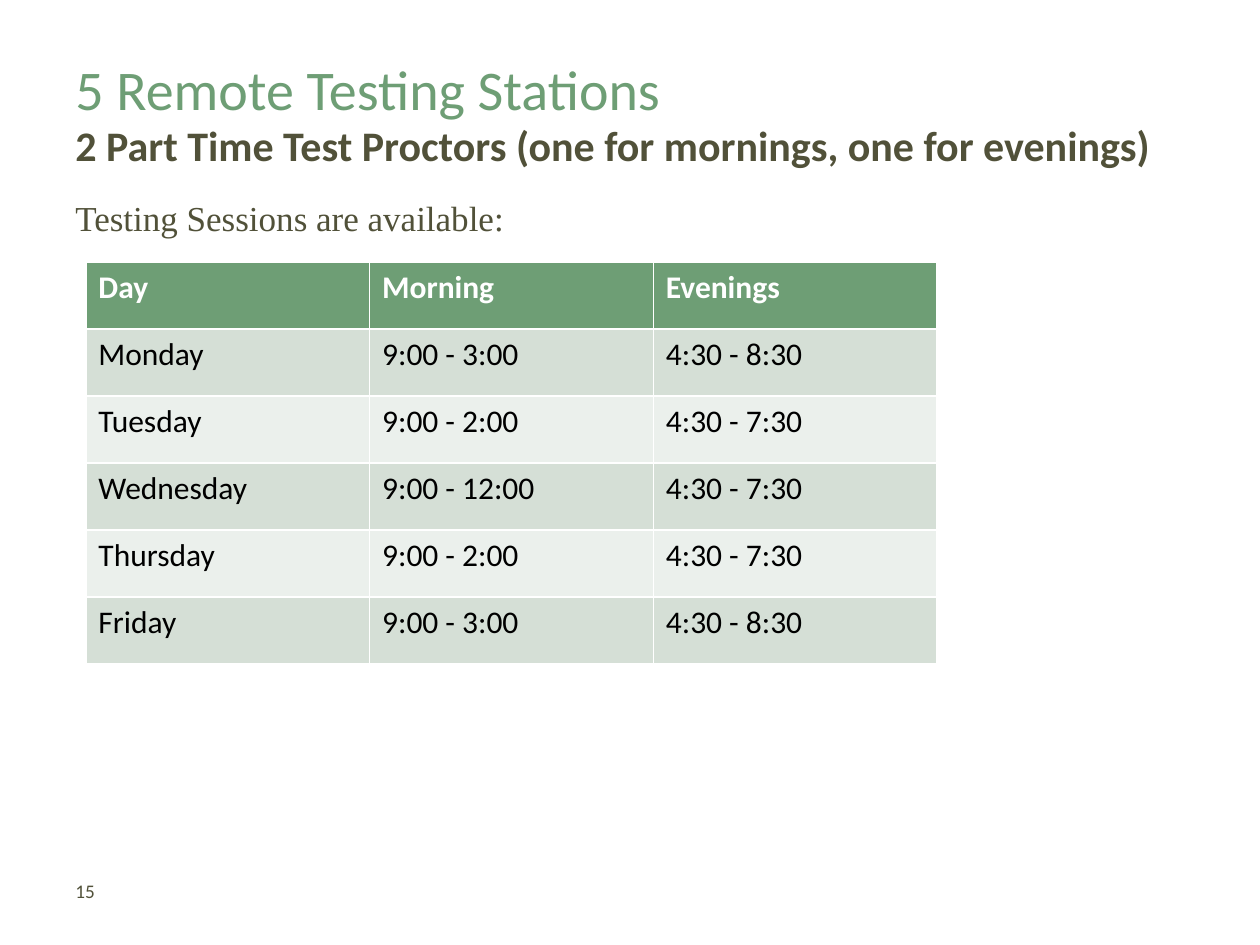
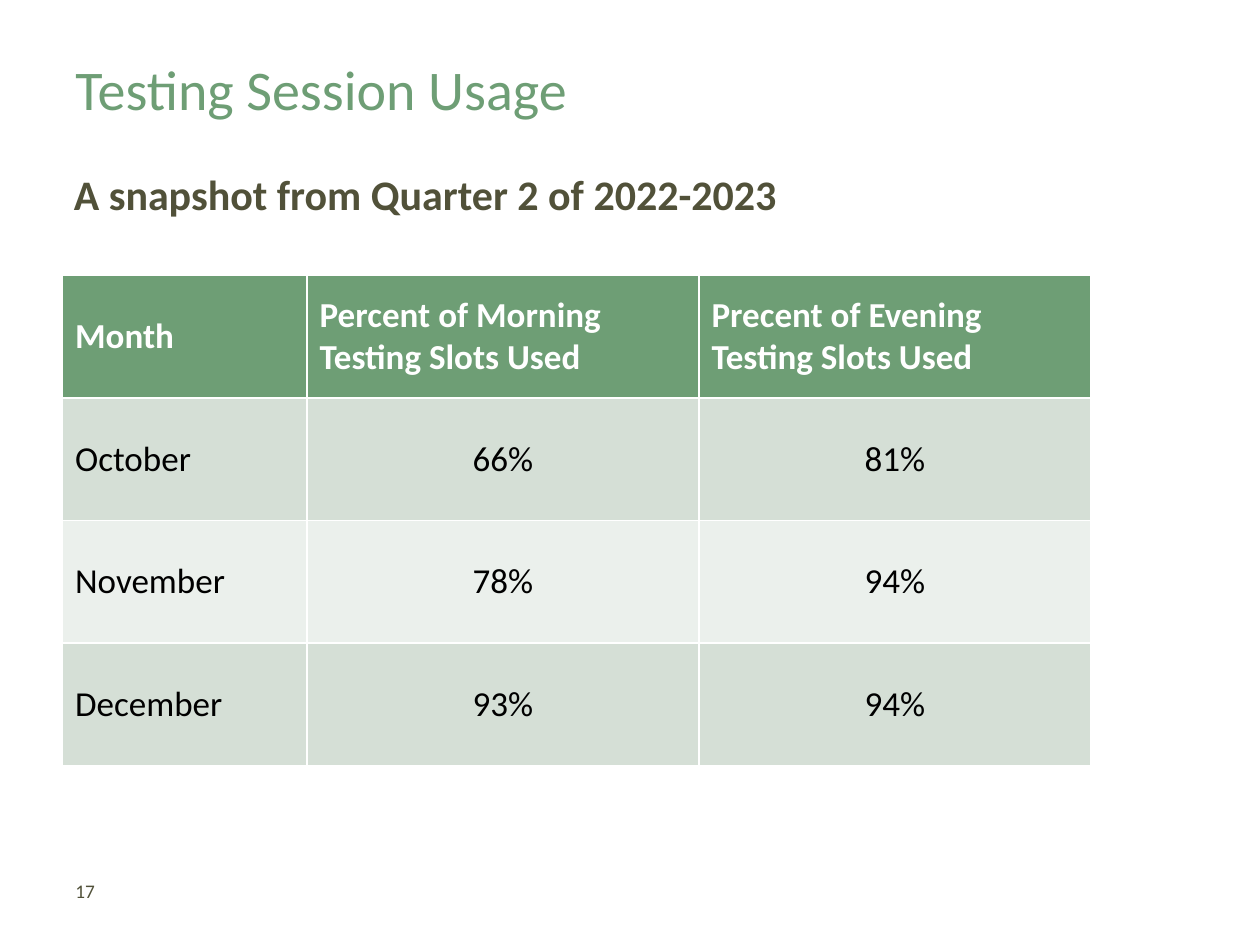
"""Build two slides on remote testing sessions and how much they are used."""
from pptx import Presentation
from pptx.dml.color import RGBColor
from pptx.enum.text import MSO_ANCHOR, PP_ALIGN
from pptx.util import Cm, Pt

GREEN = RGBColor(0x6E, 0x9E, 0x75)
OLIVE = RGBColor(0x51, 0x51, 0x39)
BAND_DARK = RGBColor(0xD5, 0xDF, 0xD6)
BAND_LIGHT = RGBColor(0xEB, 0xF0, 0xEC)
WHITE = RGBColor(0xFF, 0xFF, 0xFF)
BLACK = RGBColor(0, 0, 0)
MARGIN = 1.27
CONTENT_WIDTH = 22.86


def write(paragraph, text, size, color, bold=False, font="Calibri"):
    paragraph.text = text
    paragraph.font.name = font
    paragraph.font.size = Pt(size)
    paragraph.font.bold = bold
    paragraph.font.color.rgb = color


def add_text(slide, left, top, width, height, *style, anchor=MSO_ANCHOR.TOP, **options):
    frame = slide.shapes.add_textbox(Cm(left), Cm(top), Cm(width), Cm(height)).text_frame
    frame.word_wrap = True
    frame.vertical_anchor = anchor
    write(frame.paragraphs[0], *style, **options)


pages = [
    dict(
        title="5 Remote Testing Stations", number="15",
        subtitle="2 Part Time Test Proctors (one for mornings, one for evenings)",
        subtitle_at=(MARGIN, 2.29), intro="Testing Sessions are available:",
        table_at=(1.73, 5.28), columns=[5.72, 5.72, 5.72], row_height=1.35,
        size=18, anchor=MSO_ANCHOR.TOP, value_align=PP_ALIGN.LEFT,
        rows=[
            ("Day", "Morning", "Evenings"),
            ("Monday", "9:00 - 3:00", "4:30 - 8:30"),
            ("Tuesday", "9:00 - 2:00", "4:30 - 7:30"),
            ("Wednesday", "9:00 - 12:00", "4:30 - 7:30"),
            ("Thursday", "9:00 - 2:00", "4:30 - 7:30"),
            ("Friday", "9:00 - 3:00", "4:30 - 8:30"),
        ],
    ),
    dict(
        title="Testing Session Usage", number="17",
        subtitle="A snapshot from Quarter 2 of 2022-2023",
        subtitle_at=(1.24, 3.28), intro=None,
        table_at=(1.26, 5.55), columns=[4.93, 7.9, 7.9], row_height=2.47,
        size=20, anchor=MSO_ANCHOR.MIDDLE, value_align=PP_ALIGN.CENTER,
        rows=[
            ("Month", "Percent of Morning Testing Slots Used",
             "Precent of Evening Testing Slots Used"),
            ("October", "66%", "81%"),
            ("November", "78%", "94%"),
            ("December", "93%", "94%"),
        ],
    ),
]

deck = Presentation()
deck.slide_width, deck.slide_height = Cm(25.4), Cm(19.05)

for page in pages:
    slide = deck.slides.add_slide(deck.slide_layouts[6])
    add_text(slide, MARGIN, 0.97, CONTENT_WIDTH, 1.37, page["title"], 32, GREEN)
    add_text(slide, MARGIN, 17.58, 5.92, 0.76, page["number"], 11, OLIVE,
             anchor=MSO_ANCHOR.MIDDLE)
    if page["intro"]:
        add_text(slide, MARGIN, 3.84, CONTENT_WIDTH, 12.24, page["intro"], 20, OLIVE,
                 font="Times New Roman")
    add_text(slide, *page["subtitle_at"], CONTENT_WIDTH, 1.12, page["subtitle"], 24, OLIVE,
             bold=True)

    rows, columns = page["rows"], page["columns"]
    left, top = page["table_at"]
    table = slide.shapes.add_table(
        len(rows), len(columns), Cm(left), Cm(top),
        Cm(sum(columns)), Cm(page["row_height"] * len(rows))).table
    for column, width in zip(table.columns, columns):
        column.width = Cm(width)
    for r, row in enumerate(rows):
        table.rows[r].height = Cm(page["row_height"])
        header = r == 0
        band = GREEN if header else BAND_DARK if r % 2 else BAND_LIGHT
        for c, text in enumerate(row):
            cell = table.cell(r, c)
            cell.fill.solid()
            cell.fill.fore_color.rgb = band
            cell.vertical_anchor = page["anchor"]
            entry = cell.text_frame.paragraphs[0]
            write(entry, text, page["size"], WHITE if header else BLACK, bold=header)
            if c and not header:
                entry.alignment = page["value_align"]

deck.save("out.pptx")
